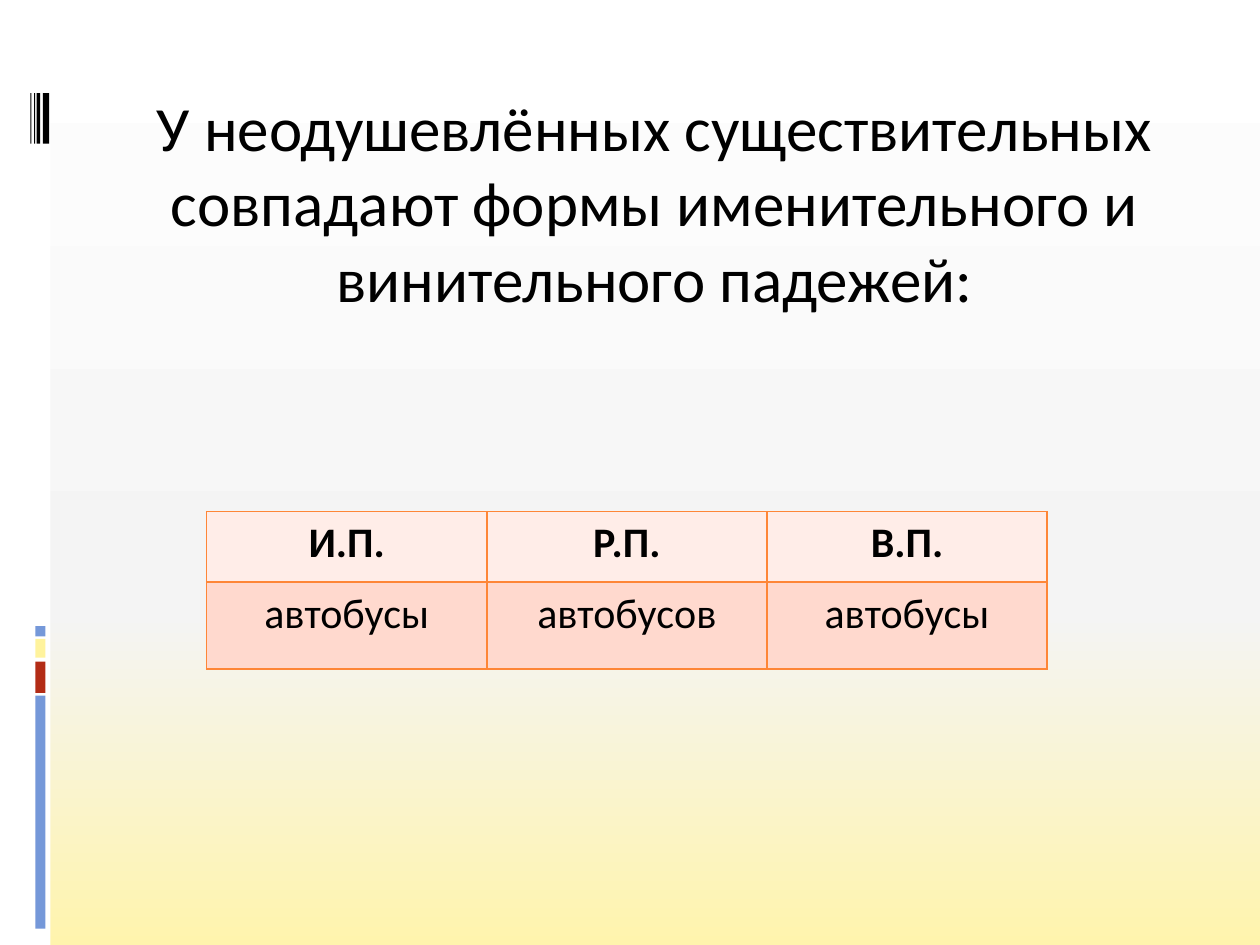
from pptx import Presentation
from pptx.dml.color import RGBColor as RGB
from pptx.enum.shapes import MSO_SHAPE as Shape
from pptx.enum.text import MSO_ANCHOR as Anchor, MSO_AUTO_SIZE as Auto, PP_ALIGN as Align
from pptx.oxml import parse_xml
from pptx.oxml.ns import nsdecls
from pptx.util import Inches, Pt

HUES = {
    "white": "FFFFFF", "black": "000000", "gray": "F4F4F4", "cream": "FFF4AD",
    "blue": "7598D9", "red": "B32C16", "yellow": "FFF39D",
    "head": "FFEDE8", "body": "FFD9CE", "edge": "FE8637",
}
FONT = "Calibri"
TITLE = "У неодушевлённых существительных совпадают формы именительного и винительного падежей:"
CASES = [
    ("И.П.", "Р.П.", "В.П."),
    ("автобусы", "автобусов", "автобусы"),
]
ROWS = [("head", 0.56, True), ("body", 0.69, False)]
STOPS = [(0, "white"), (65, "gray"), (100, "cream")]
CODE = [(0.34, 0.05), (0.29, 0.03), (0.27, 0.01), (0.24, 0.01)]
MARKS = [("blue", 5.52, 1.85), ("red", 5.25, 0.25), ("yellow", 5.07, 0.15), ("blue", 4.97, 0.08)]
BARS = (
    [("white", 0, 0, 0.4, 7.5)]
    + [("black", x, 0.74, w, 0.4) for x, w in CODE]
    + [(hue, 0.28, y, 0.08, h) for hue, y, h in MARKS]
)


def paint(fill, hue):
    fill.solid()
    fill.fore_color.rgb = RGB.from_string(HUES[hue])


def write(frame, text, size, bold=False):
    para = frame.paragraphs[0]
    para.alignment = Align.CENTER
    run = para.add_run()
    run.text = text
    font = run.font
    font.name, font.size, font.bold = FONT, Pt(size), bold
    font.color.rgb = RGB.from_string(HUES["black"])


def shade(slide):
    fill = slide.background.fill
    fill.gradient()
    grad = fill._xPr.find("{*}gradFill")
    stops = "".join(
        f'<a:gs pos="{pos * 1000}"><a:srgbClr val="{HUES[hue]}"/></a:gs>' for pos, hue in STOPS
    )
    fresh = parse_xml(
        f'<a:gradFill {nsdecls("a")} rotWithShape="1"><a:gsLst>{stops}</a:gsLst>'
        '<a:lin ang="5400000" scaled="0"/></a:gradFill>'
    )
    grad.getparent().replace(grad, fresh)


def frame_cell(cell):
    props = cell._tc.get_or_add_tcPr()
    for i, side in enumerate(("lnL", "lnR", "lnT", "lnB")):
        props.insert(i, parse_xml(
            f'<a:{side} {nsdecls("a")} w="{Pt(1)}"><a:solidFill>'
            f'<a:srgbClr val="{HUES["edge"]}"/></a:solidFill></a:{side}>'
        ))


def add_bars(slide):
    for hue, *box in BARS:
        bar = slide.shapes.add_shape(Shape.RECTANGLE, *map(Inches, box))
        bar.shadow.inherit = False
        paint(bar.fill, hue)
        bar.line.fill.background()


def add_title(slide):
    title = slide.shapes.title
    title.left, title.top, title.width, title.height = map(Inches, (0.62, 0.62, 9.14, 2.19))
    frame = title.text_frame
    frame.word_wrap = True
    frame.auto_size = Auto.NONE
    frame.vertical_anchor = Anchor.BOTTOM
    frame.margin_left, frame.margin_right = Inches(0.11), Inches(0.1)
    frame.margin_top, frame.margin_bottom = Inches(0.05), Inches(0.31)
    write(frame, TITLE, 36)


def add_cases(slide):
    box = map(Inches, (1.64, 4.06, 6.67, 1.25))
    table = slide.shapes.add_table(len(CASES), len(CASES[0]), *box).table
    for r, (words, (hue, high, bold)) in enumerate(zip(CASES, ROWS)):
        table.rows[r].height = Inches(high)
        for c, word in enumerate(words):
            cell = table.cell(r, c)
            paint(cell.fill, hue)
            frame_cell(cell)
            write(cell.text_frame, word, 24, bold)


def main():
    deck = Presentation()
    deck.slide_width, deck.slide_height = Inches(10), Inches(7.5)
    slide = deck.slides.add_slide(deck.slide_layouts[5])
    shade(slide)
    add_bars(slide)
    add_title(slide)
    add_cases(slide)
    deck.save("out.pptx")


if __name__ == "__main__":
    main()
